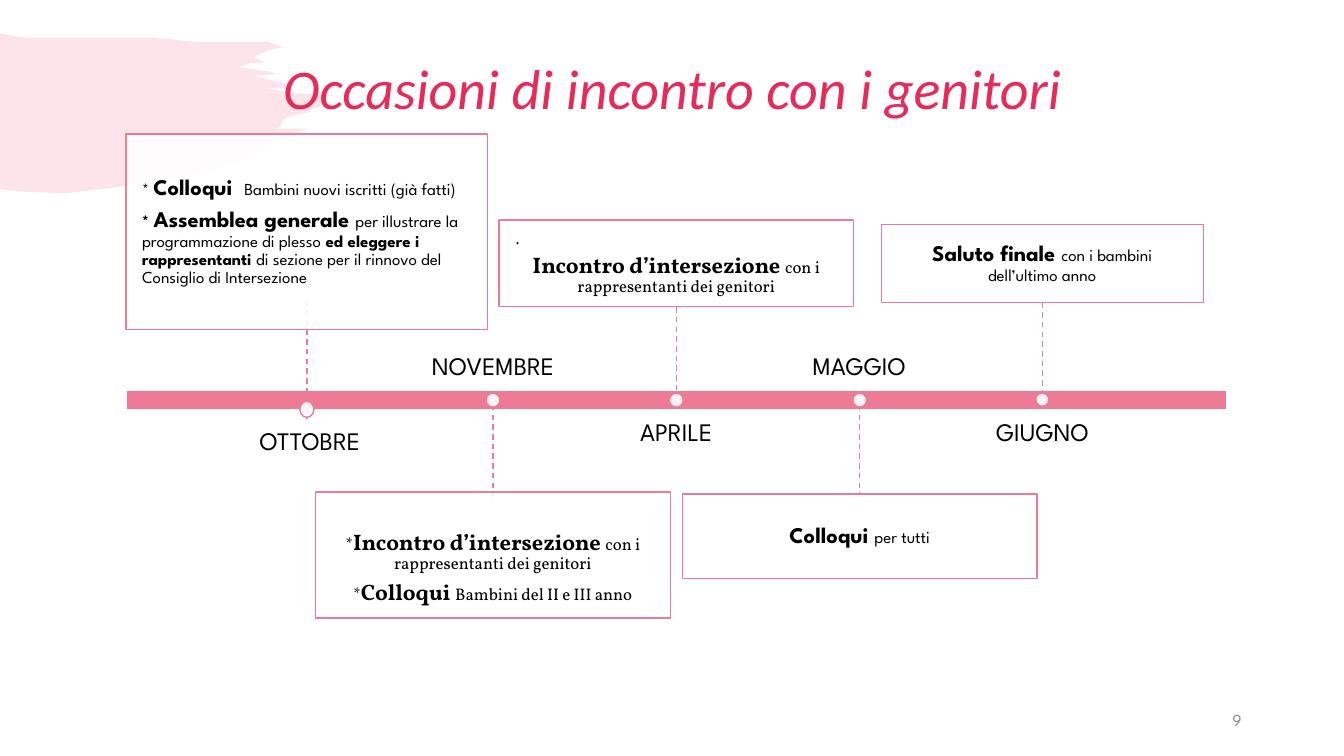
import pptx
import pptx.dml.color
import pptx.enum.shapes
import pptx.enum.dml
import pptx.enum.text
import pptx.oxml
import pptx.oxml.ns
import pptx.util

Pt = pptx.util.Pt
Align = pptx.enum.text.PP_ALIGN
Anchor = pptx.enum.text.MSO_ANCHOR
Shape = pptx.enum.shapes.MSO_SHAPE
BOTTOM, TOP = 2, 0


def color(hex_string):
    return pptx.dml.color.RGBColor.from_string(hex_string)


class TimelineSlide:
    PINK, WHITE, BLACK = "EE7B96", "FFFFFF", "000000"
    SPARTAN, VOLLKORN = "League Spartan", "Vollkorn"

    def __init__(self, slide):
        self.slide = slide
        self.shapes = slide.shapes

    def style(self, shape, fill, opacity=100, line=None):
        shape.shadow.inherit = False
        shape.fill.solid()
        shape.fill.fore_color.rgb = color(fill)
        if opacity < 100:
            fill_color = shape._element.spPr.find(".//" + pptx.oxml.ns.qn("a:srgbClr"))
            fill_color.append(pptx.oxml.parse_xml(
                f'<a:alpha {pptx.oxml.ns.nsdecls("a")} val="{opacity * 1000}"/>'))
        if line:
            shape.line.color.rgb = color(line)
            shape.line.width = Pt(1)
        else:
            shape.line.fill.background()

    def shape(self, kind, left, top, width, height, fill, opacity=100, line=None):
        shape = self.shapes.add_shape(kind, Pt(left), Pt(top), Pt(width), Pt(height))
        self.style(shape, fill, opacity, line)
        return shape

    def outline(self, points, fill, opacity):
        builder = self.shapes.build_freeform(*points[0], scale=Pt(1))
        builder.add_line_segments(points[1:], close=True)
        self.style(builder.convert_to_shape(), fill, opacity)

    def dashed_line(self, x, top, bottom):
        line = self.shapes.add_connector(
            pptx.enum.shapes.MSO_CONNECTOR.STRAIGHT, Pt(x), Pt(top), Pt(x), Pt(bottom))
        line.line.color.rgb = color(self.PINK)
        line.line.width = Pt(1)
        line.line.dash_style = pptx.enum.dml.MSO_LINE.DASH
        line._element.spPr.append(pptx.oxml.parse_xml(
            f'<a:effectLst {pptx.oxml.ns.nsdecls("a")}/>'))
        return line

    def add_text(self, shape, paragraphs, anchor, insets):
        """Each paragraph is (alignment, space before, font, runs); a run is (text, size, bold)."""
        frame = shape.text_frame
        frame.word_wrap = True
        frame.vertical_anchor = anchor
        frame.margin_left = frame.margin_right = Pt(insets[0])
        frame.margin_top, frame.margin_bottom = Pt(insets[1]), Pt(insets[2])
        for index, (alignment, before, font, runs) in enumerate(paragraphs):
            paragraph = frame.add_paragraph() if index else frame.paragraphs[0]
            paragraph.alignment = alignment
            paragraph.line_spacing = 0.9
            paragraph.space_before = Pt(before)
            for text, size, bold in runs:
                run = paragraph.add_run()
                run.text = text
                run.font.name = font
                run.font.size = Pt(size)
                run.font.bold = bold
                run.font.color.rgb = color(self.BLACK)

    def label(self, left, top, width, height, text, size, font, ink,
              alignment=Align.CENTER, anchor=Anchor.TOP, italic=False):
        box = self.shapes.add_textbox(Pt(left), Pt(top), Pt(width), Pt(height))
        self.add_text(box, [(alignment, 0, font, [(text, size, False)])], anchor, (0, 0, 0))
        run_font = box.text_frame.paragraphs[0].runs[0].font
        run_font.color.rgb = color(ink)
        run_font.italic = italic

    def event(self, month, month_x, month_top, box, line_span, dot, paragraphs, insets):
        left, top, width, height = box
        x = left + width / 2
        above = top < BAR_TOP
        line = self.dashed_line(x, *line_span)
        note = self.shape(Shape.RECTANGLE, *box, self.WHITE, 90, self.PINK)
        self.add_text(note, paragraphs, Anchor.MIDDLE, insets)
        if above and line_span[0] == top + height:
            line.begin_connect(note, BOTTOM)
        elif not above and line_span[1] == top:
            line.end_connect(note, TOP)
        self.label(month_x - 105, month_top, 210, 42, month, 18, self.SPARTAN, self.BLACK,
                   anchor=Anchor.TOP if month_top > BAR_TOP else Anchor.BOTTOM)
        dot_top, dot_width, dot_height = dot
        self.shape(Shape.OVAL, x - dot_width / 2, dot_top, dot_width, dot_height,
                   self.WHITE, 90, self.PINK)


presentation = pptx.Presentation()
presentation.slide_width, presentation.slide_height = Pt(960), Pt(540)
page = TimelineSlide(presentation.slides.add_slide(presentation.slide_layouts[6]))
SPARTAN, VOLLKORN = page.SPARTAN, page.VOLLKORN

# Brush stroke
BRUSH = [
    (0, 24.5), (18, 26.6), (47.5, 27.4), (73.4, 26.6), (108.7, 27.4), (139.7, 29.5),
    (178.6, 29.5), (192, 30.3), (201.6, 33.8), (195.1, 35.3), (183.6, 38.9), (182.2, 41),
    (184.3, 42.5), (188.6, 44.6), (179, 45), (171.4, 47.5), (177.1, 49), (184.3, 50.4),
    (191.5, 51.1), (198, 53.3), (180.7, 54), (189.4, 56.2), (196.6, 58.3), (201.6, 59),
    (207.4, 59.8), (208.8, 61.2), (206.6, 63.4), (204.5, 63.4), (189.4, 63.4), (213, 66.6),
    (237.6, 67.7), (231.1, 69.8), (231, 74.5), (229, 76.3), (223, 77.5), (221, 79.9),
    (216, 81.4), (203.8, 83.5), (201.6, 86.4), (200.2, 90), (197.3, 92.2), (221.8, 92.2),
    (208, 95.3), (193.7, 99.4), (196.6, 102.2), (181.4, 106.6), (189.4, 106.6),
    (170, 115.5), (141.8, 123.8), (110, 129.6), (73.4, 135.4), (46.8, 137.5),
    (16.6, 136.8), (0, 135.4)]
page.outline(BRUSH, "F07C98", 20)

# Title
page.label(66, 29, 828, 73, "Occasioni di incontro con i genitori", 40, "Calibri", "E72A58",
           anchor=Anchor.MIDDLE, italic=True)

# Timeline bar
BAR_TOP = 278.6
page.shape(Shape.RECTANGLE, 90, BAR_TOP, 786, 14.4, page.PINK, line=page.WHITE)

# Notes with their months
ABOVE_BAR, BELOW_BAR = 230.4, 299.5
DOT = (280.8, 10, 10)
MEETING = [("Incontro d’intersezione ", 16, True), ("con i rappresentanti dei genitori", 12, False)]
EVENTS = [
    ("OTTOBRE", 306, (90, 95.8, 258.4, 139.6), (214.5, 299.5), (286.6, 10, 11.5), [
        (Align.LEFT, 0, SPARTAN, [("* ", 12, False), ("Colloqui  ", 16, True),
                                  ("Bambini nuovi iscritti (già fatti)", 12, False)]),
        (Align.LEFT, 5.6, SPARTAN, [
            ("* ", 12, True), ("Assemblea generale ", 16, True),
            ("per illustrare la programmazione di plesso ", 12, False),
            ("ed eleggere i rappresentanti ", 12, True),
            ("di sezione per il rinnovo del Consiglio di Intersezione", 12, False)])],
     (11.5, 6.5, 6.5)),
    ("NOVEMBRE", ABOVE_BAR, (225.4, 351.4, 253.4, 90), (282.2, 359.3), DOT, [
        (Align.CENTER, 0, VOLLKORN, [("*", 12, False)] + MEETING),
        (Align.CENTER, 5.6, VOLLKORN, [("*", 12, False), ("Colloqui ", 16, True),
                                       ("Bambini del II e III anno", 12, False)])],
     (11.5, 24, 5)),
    ("APRILE", BELOW_BAR, (356.4, 157, 253.4, 62), (212.4, 289.4), DOT, [
        (Align.LEFT, 0, SPARTAN, [(".", 12, False)]),
        (Align.CENTER, 4.2, VOLLKORN, MEETING)], (11.5, 3.6, 3.6)),
    ("MAGGIO", ABOVE_BAR, (487.4, 352.8, 253.4, 60.5), (282.2, 359.3), DOT, [
        (Align.CENTER, 0, SPARTAN, [("Colloqui ", 16, True), ("per tutti", 12, False)])],
     (11.5, 3.6, 3.6)),
    ("GIUGNO", BELOW_BAR, (629.5, 160.5, 230, 55.5), (216, 286), (280.8, 9.4, 9.4), [
        (Align.CENTER, 0, SPARTAN, [("Saluto finale ", 16, True),
                                    ("con i bambini dell’ultimo anno", 12, False)])],
     (11.5, 3.6, 3.6)),
]
for index, (month, *details) in enumerate(EVENTS):
    page.event(month, 221.4 + 130.8 * index, *details)

# Page number
page.label(678, 500.4, 208.8, 28.8, "9", 12, SPARTAN, "888888", Align.RIGHT, Anchor.MIDDLE)

presentation.save("out.pptx")
